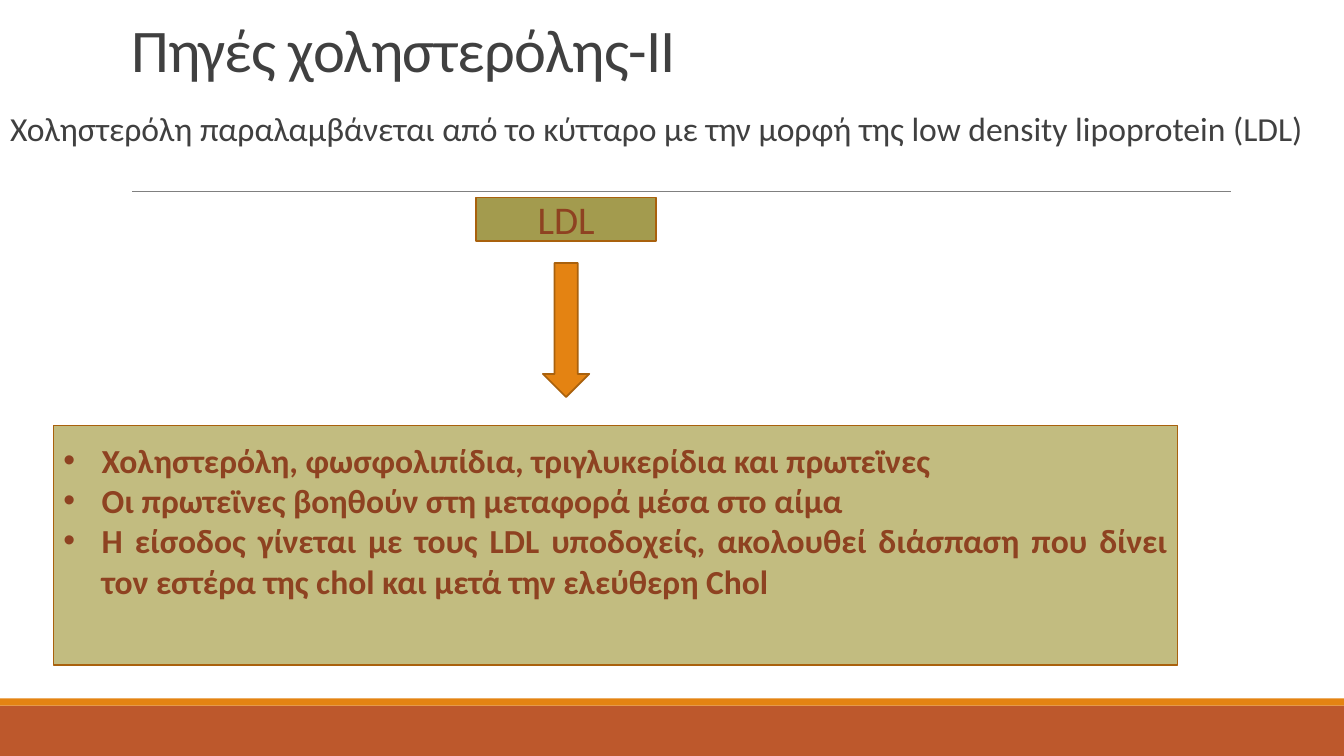
from lxml.etree import SubElement
from pptx import Presentation
from pptx.dml.color import RGBColor
from pptx.enum.shapes import MSO_CONNECTOR, MSO_SHAPE
from pptx.enum.text import MSO_ANCHOR, MSO_AUTO_SIZE, PP_ALIGN
from pptx.oxml.ns import qn
from pptx.util import Inches, Pt

TEXT_GREY = "404040"
RULE_GREY = "808080"
ORANGE = "E48312"
OUTLINE = "A9610D"
BROWN = "8E4221"
RUST = "BD582C"
OLIVE = "A39B4E"
PALE_OLIVE = "C2BC80"

TITLE = "Πηγές χοληστερόλης-ΙΙ"
INTRO = "Χοληστερόλη παραλαμβάνεται από το κύτταρο με την μορφή της low density lipoprotein (LDL)"
FACTS = [
    "Χοληστερόλη, φωσφολιπίδια, τριγλυκερίδια και πρωτεϊνες",
    "Οι πρωτεϊνες βοηθούν στη μεταφορά μέσα στο αίμα",
    "Η είσοδος γίνεται με τους LDL υποδοχείς, ακολουθεί διάσπαση που δίνει "
    "τον εστέρα της chol και μετά την ελεύθερη Chol",
]


def color(value):
    return RGBColor.from_string(value)


def set_box(shape, left, top, width, height):
    shape.left, shape.top = Inches(left), Inches(top)
    shape.width, shape.height = Inches(width), Inches(height)


def set_font(para, size, tint, bold=False):
    para.font.name = "Calibri"
    para.font.size = Pt(size)
    para.font.bold = bold
    para.font.color.rgb = color(tint)


def set_bullet(para, indent, hanging, mark=None):
    properties = para._p.get_or_add_pPr()
    properties.set("marL", str(Inches(indent)))
    properties.set("indent", str(-Inches(hanging)))
    if mark:
        SubElement(properties, qn("a:buFont")).set("typeface", "Arial")
        SubElement(properties, qn("a:buChar")).set("char", mark)
    else:
        SubElement(properties, qn("a:buNone"))


def add_block(page, kind, left, top, width, height, fill, outline=None):
    block = page.shapes.add_shape(
        kind, Inches(left), Inches(top), Inches(width), Inches(height))
    block.shadow.inherit = False
    block.fill.solid()
    block.fill.fore_color.rgb = color(fill)
    if outline:
        block.line.color.rgb = color(outline)
        block.line.width = Pt(1.25)
    else:
        block.line.fill.background()
    return block


def add_footer(page, left, top, width, height):
    stripe = 0.07
    add_block(page, MSO_SHAPE.RECTANGLE, left, top + stripe, width, height - stripe, RUST)
    add_block(page, MSO_SHAPE.RECTANGLE, left, top, width, stripe, ORANGE)


def add_rule(page, left, top, width):
    rule = page.shapes.add_connector(
        MSO_CONNECTOR.STRAIGHT, Inches(left), Inches(top), Inches(left + width), Inches(top))
    rule.line.color.rgb = color(RULE_GREY)
    rule.line.width = Pt(0.5)
    SubElement(rule._element.spPr, qn("a:effectLst"))


def fill_title(page, left, top, width, height):
    title = page.shapes.title
    set_box(title, left, top, width, height)
    frame = title.text_frame
    frame.text = TITLE
    frame.word_wrap = True
    frame.auto_size = MSO_AUTO_SIZE.NONE
    frame.vertical_anchor = MSO_ANCHOR.BOTTOM
    para = frame.paragraphs[0]
    para.alignment = PP_ALIGN.LEFT
    para.line_spacing = 0.85
    set_font(para, 43.2, TEXT_GREY)
    para._p.pPr.find(qn("a:defRPr")).set("spc", "-50")


def fill_intro(page, left, top, width, height):
    body = page.placeholders[1]
    set_box(body, left, top, width, height)
    frame = body.text_frame
    frame.text = INTRO
    frame.word_wrap = True
    frame.auto_size = MSO_AUTO_SIZE.NONE
    frame.margin_left = frame.margin_right = 0
    para = frame.paragraphs[0]
    set_bullet(para, 0.1, 0)
    para.line_spacing = 0.9
    para.space_before = Pt(12)
    para.space_after = Pt(2)
    set_font(para, 24, TEXT_GREY)


def add_source(page, left, top, width, height):
    label_height, arrow_width, arrow_height = 0.43, 0.46, 1.33
    label = add_block(page, MSO_SHAPE.RECTANGLE, left, top, width, label_height, OLIVE, OUTLINE)
    label.text_frame.text = "LDL"
    label.text_frame.vertical_anchor = MSO_ANCHOR.MIDDLE
    para = label.text_frame.paragraphs[0]
    para.alignment = PP_ALIGN.CENTER
    set_font(para, 28, BROWN)
    add_block(page, MSO_SHAPE.DOWN_ARROW, left + (width - arrow_width) / 2,
              top + height - arrow_height, arrow_width, arrow_height, ORANGE, OUTLINE)


def add_facts(page, left, top, width, height):
    panel = add_block(page, MSO_SHAPE.RECTANGLE, left, top, width, height, PALE_OLIVE, OUTLINE)
    frame = panel.text_frame
    frame.word_wrap = True
    frame.vertical_anchor = MSO_ANCHOR.TOP
    frame.margin_top = Inches(0.14)
    frame.text = "\n".join(FACTS)
    for para in frame.paragraphs:
        set_bullet(para, 0.38, 0.38, "•")
        para.alignment = PP_ALIGN.JUSTIFY
        set_font(para, 24, BROWN, bold=True)


def main():
    deck = Presentation()
    deck.slide_width, deck.slide_height = Inches(13.33), Inches(7.5)
    page = deck.slides.add_slide(deck.slide_layouts[1])
    add_footer(page, 0, 6.93, 13.33, 0.57)
    add_rule(page, 1.31, 1.9, 10.9)
    fill_title(page, 1.2, 0.31, 11, 0.58)
    fill_intro(page, 0, 1.07, 13.03, 4.4)
    add_source(page, 4.72, 1.96, 1.79, 1.98)
    add_facts(page, 0.53, 4.22, 11.15, 2.38)
    deck.save("out.pptx")


if __name__ == "__main__":
    main()
